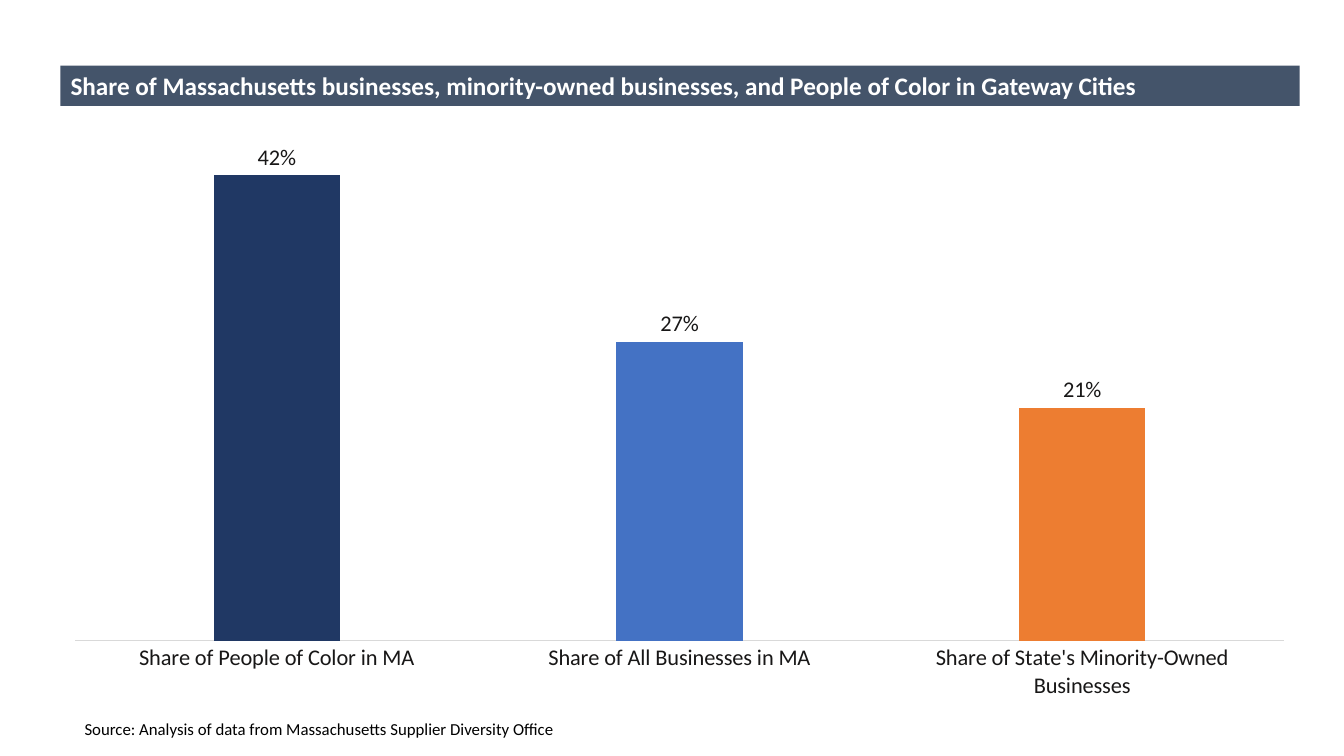
from dataclasses import dataclass

from lxml import etree
from pptx import Presentation
from pptx.chart.data import CategoryChartData
from pptx.dml.color import RGBColor
from pptx.enum import chart as ch, text
from pptx.oxml.ns import qn
from pptx.util import Inches, Pt


@dataclass(frozen=True)
class Theme:
    font: str = "Calibri"
    band: str = "44546A"
    white: str = "FFFFFF"
    black: str = "000000"
    label: str = "181717"
    axis: str = "D9D9D9"
    title_size: int = 18
    label_size: int = 16
    source_size: int = 12


TITLE = ("Share of Massachusetts businesses, minority-owned businesses, "
         "and People of Color in Gateway Cities")
SOURCE = "Source: Analysis of data from Massachusetts Supplier Diversity Office"
SHARES = [
    ("Share of People of Color in MA", 0.42, "203864"),
    ("Share of All Businesses in MA", 0.27, "4472C4"),
    ("Share of State's Minority-Owned Businesses", 0.21, "ED7D31"),
]
PLOT = {"x": 0.012, "y": 0.059, "w": 0.975, "h": 0.807}
THEME = Theme()
LEFT, WIDTH = 0.6, 12.29
BAND_TOP, BAND_HEIGHT = 0.65, 0.4
CHART_TOP, CHART_HEIGHT = BAND_TOP + BAND_HEIGHT, 6.13


def style(font, size, color, bold=False):
    font.name = THEME.font
    font.size = Pt(size)
    font.bold = bold
    font.color.rgb = RGBColor.from_string(color)


def paint(fill, color):
    fill.solid()
    fill.fore_color.rgb = RGBColor.from_string(color)


def write(sp, words, size, color, bold=False):
    tf = sp.text_frame
    tf.word_wrap = True
    tf.auto_size = text.MSO_AUTO_SIZE.NONE
    tf.vertical_anchor = text.MSO_ANCHOR.MIDDLE
    p = tf.paragraphs[0]
    p.alignment = text.PP_ALIGN.LEFT
    p.line_spacing = 1.0
    r = p.add_run()
    r.text = words
    style(r.font, size, color, bold)


def fix_plot(chart):
    area = chart._chartSpace.find(".//" + qn("c:plotArea"))
    for old in area.findall(qn("c:layout")):
        area.remove(old)
    layout = etree.Element(qn("c:layout"))
    manual = etree.SubElement(layout, qn("c:manualLayout"))
    settings = {"layoutTarget": "inner", "xMode": "edge", "yMode": "edge", **PLOT}
    for tag, value in settings.items():
        etree.SubElement(manual, qn("c:" + tag)).set("val", str(value))
    area.insert(0, layout)


def add_shares(s):
    data = CategoryChartData(number_format="0%")
    data.categories = [name for name, _, _ in SHARES]
    data.add_series("Series 1", [share for _, share, _ in SHARES])
    chart = s.shapes.add_chart(
        ch.XL_CHART_TYPE.COLUMN_CLUSTERED, Inches(LEFT), Inches(CHART_TOP),
        Inches(WIDTH), Inches(CHART_HEIGHT), data).chart
    chart.has_title = False
    chart.has_legend = False
    style(chart.font, THEME.label_size, THEME.label)

    cats = chart.category_axis
    cats.major_tick_mark = ch.XL_TICK_MARK.NONE
    cats.format.line.color.rgb = RGBColor.from_string(THEME.axis)
    cats.format.line.width = Pt(0.75)
    style(cats.tick_labels.font, THEME.label_size, THEME.label)

    vals = chart.value_axis
    vals.minimum_scale, vals.maximum_scale = 0, 0.45
    vals.has_major_gridlines = False
    vals.visible = False

    plot = chart.plots[0]
    plot.gap_width, plot.overlap = 219, -27
    plot.vary_by_categories = False
    series = plot.series[0]
    paint(series.format.fill, SHARES[1][2])
    for i, (_, _, color) in enumerate(SHARES):
        paint(series.points[i].format.fill, color)

    labels = series.data_labels
    labels.show_value = True
    labels.number_format, labels.number_format_is_linked = "0%", False
    labels.position = ch.XL_LABEL_POSITION.OUTSIDE_END
    style(labels.font, THEME.label_size, THEME.label)
    fix_plot(chart)


def main():
    prs = Presentation()
    prs.slide_width, prs.slide_height = Inches(13.33), Inches(7.5)
    s = prs.slides.add_slide(prs.slide_layouts[5])

    title = s.shapes.title
    title.left, title.top = Inches(LEFT), Inches(BAND_TOP)
    title.width, title.height = Inches(WIDTH), Inches(BAND_HEIGHT)
    paint(title.fill, THEME.band)
    write(title, TITLE, THEME.title_size, THEME.white, bold=True)

    add_shares(s)
    source = s.shapes.add_textbox(Inches(0.74), Inches(7.08), Inches(5.2), Inches(0.3))
    write(source, SOURCE, THEME.source_size, THEME.black)
    prs.save("out.pptx")


if __name__ == "__main__":
    main()
